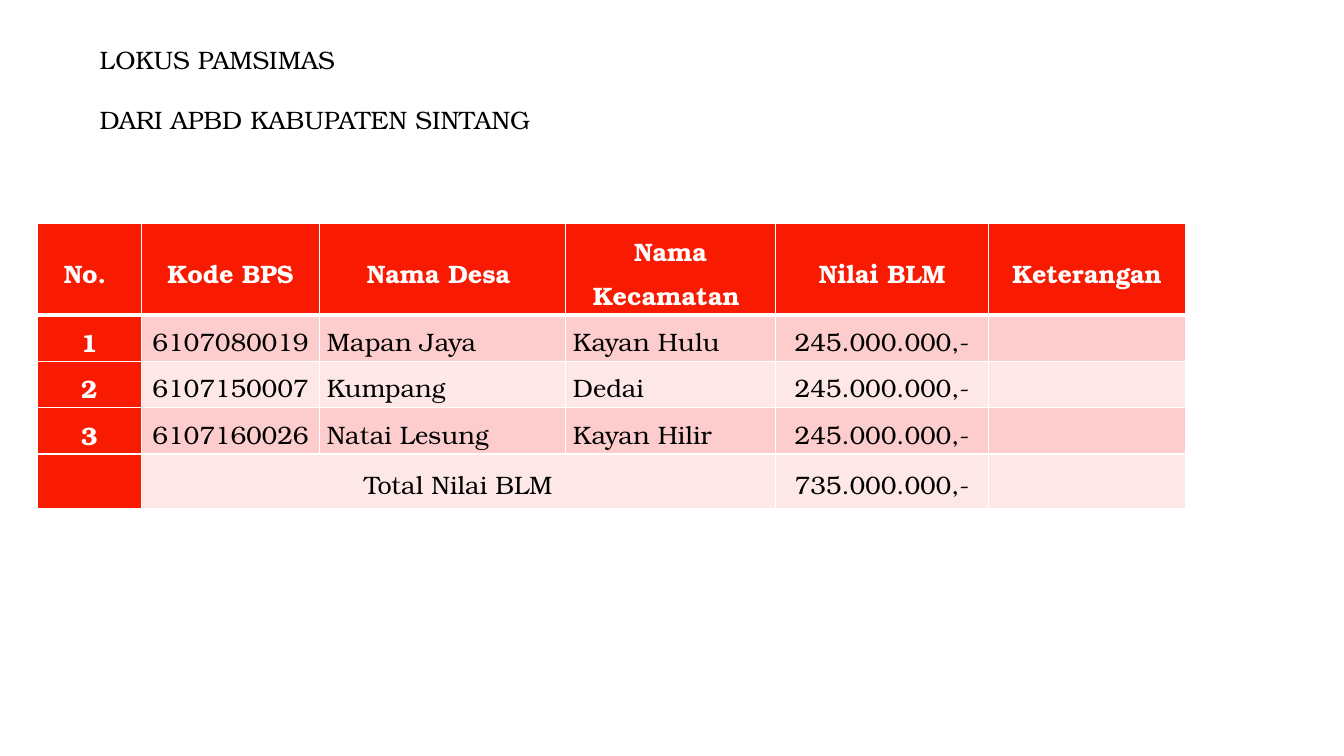
from lxml.etree import SubElement
from pptx import Presentation
from pptx.dml.color import RGBColor
from pptx.enum.text import MSO_ANCHOR, PP_ALIGN
from pptx.oxml.ns import qn
from pptx.util import Cm, Pt

RED, PINK, PALE = "F81B02", "FCCDCC", "FEE8E7"
WHITE, BLACK = "FFFFFF", "000000"

WIDTHS = [2.62, 4.5, 6.2, 5.28, 5.38, 4.95]
HEIGHTS = [2.31, 1.17, 1.17, 1.17, 1.37]
ROWS = [
    ["No. ", "Kode BPS", "Nama Desa ", "Nama Kecamatan ", "Nilai BLM", "Keterangan"],
    ["1", "6107080019", "Mapan Jaya", "Kayan Hulu", "245.000.000,-", ""],
    ["2", "6107150007", "Kumpang", "Dedai", "245.000.000,-", ""],
    ["3", "6107160026", "Natai Lesung", "Kayan Hilir", "245.000.000,-", ""],
    ["", "Total Nilai BLM", "", "", "735.000.000,-", ""],
]
TOTAL_ROW = len(ROWS) - 1
NAME_COLUMNS = (2, 3)


def rgb(value):
    return RGBColor.from_string(value)


def write(p, text, font="TeX Gyre Bonum", size=18, color=BLACK, bold=False,
          align=PP_ALIGN.LEFT, before=0, spacing=1.0):
    p.alignment = align
    p.space_before = Pt(before)
    p.line_spacing = spacing
    if text:
        r = p.add_run()
        r.text = text
        r.font.name = font
        r.font.size = Pt(size)
        r.font.bold = bold
        r.font.color.rgb = rgb(color)


class Deck:
    def __init__(self, width, height, font):
        self.font = font
        self.prs = Presentation()
        self.prs.slide_width = Cm(width)
        self.prs.slide_height = Cm(height)
        self.s = self.prs.slides.add_slide(self.prs.slide_layouts[6])

    def text(self, left, top, width, height, lines, gap):
        sp = self.s.shapes.add_textbox(Cm(left), Cm(top), Cm(width), Cm(height))
        tf = sp.text_frame
        tf.word_wrap = True
        for i, line in enumerate(lines):
            p = tf.add_paragraph() if i else tf.paragraphs[0]
            write(p, line, font=self.font, before=gap if i else 0)

    def border(self, cell, row):
        tc_pr = cell._tc.get_or_add_tcPr()
        for side in "LRTB":
            heavy = (row, side) in ((0, "B"), (1, "T"))
            ln = SubElement(tc_pr, qn(f"a:ln{side}"), w=str(Pt(3 if heavy else 1)))
            fill = SubElement(ln, qn("a:solidFill"))
            SubElement(fill, qn("a:srgbClr"), val=WHITE)

    def table(self, left, top, widths, heights, rows):
        sp = self.s.shapes.add_table(len(rows), len(widths), Cm(left), Cm(top),
                                     Cm(sum(widths)), Cm(sum(heights)))
        table = sp.table
        for column, width in zip(table.columns, widths):
            column.width = Cm(width)
        for row, height in zip(table.rows, heights):
            row.height = Cm(height)
        for i, values in enumerate(rows):
            for j, value in enumerate(values):
                self.cell(table.cell(i, j), i, j, value)
        table.cell(TOTAL_ROW, 1).merge(table.cell(TOTAL_ROW, 3))

    def cell(self, cell, i, j, value):
        strong = i == 0 or j == 0
        named = j in NAME_COLUMNS and 0 < i < TOTAL_ROW
        self.border(cell, i)
        cell.fill.solid()
        cell.fill.fore_color.rgb = rgb(RED if strong else PINK if i % 2 else PALE)
        cell.vertical_anchor = MSO_ANCHOR.MIDDLE
        cell.margin_left = cell.margin_right = Cm(0.18)
        cell.margin_top = cell.margin_bottom = 0
        write(cell.text_frame.paragraphs[0], value, font=self.font, bold=strong,
              color=WHITE if strong else BLACK, spacing=1.2,
              align=PP_ALIGN.LEFT if named else PP_ALIGN.CENTER)


def main():
    deck = Deck(33.87, 19.05, "TeX Gyre Bonum")
    deck.table(0.94, 5.62, WIDTHS, HEIGHTS, ROWS)
    deck.text(2.26, 0.99, 11.94, 2.57,
              ["LOKUS PAMSIMAS", "DARI APBD KABUPATEN SINTANG"], gap=21.5)
    deck.prs.save("out.pptx")


if __name__ == "__main__":
    main()
